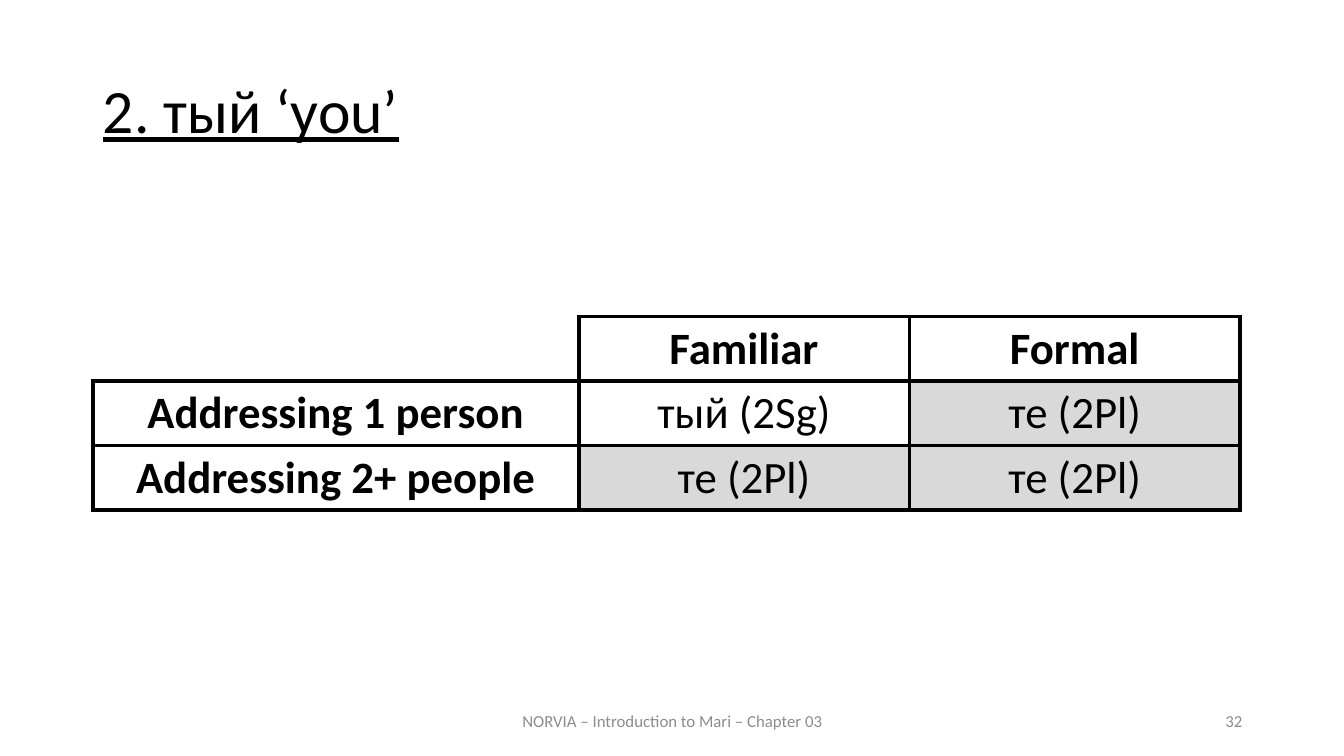
from lxml.etree import SubElement
from pptx import Presentation
from pptx.dml.color import RGBColor
from pptx.enum.text import MSO_ANCHOR, PP_ALIGN
from pptx.oxml.ns import qn
from pptx.util import Inches, Pt

COLORS = {"ink": "000000", "footer": "8C8C8C", "plural": "D9D9D9"}
FONT = "Calibri"
BORDER = Pt(3)
COLUMN_WIDTHS = (4.82, 3.28, 3.28)
ROW_HEIGHT = 0.64
PRONOUNS = (
    ("", "Familiar", "Formal"),
    ("Addressing 1 person", "тый (2Sg)", "те (2Pl)"),
    ("Addressing 2+ people", "те (2Pl)", "те (2Pl)"),
)


def write(frame, text, size, color="ink", align=PP_ALIGN.LEFT, bold=False, underline=False):
    """Put one formatted paragraph into a text frame."""
    frame.word_wrap = True
    paragraph = frame.paragraphs[0]
    paragraph.alignment = align
    run = paragraph.add_run()
    run.text = text
    font = run.font
    font.name, font.size = FONT, Pt(size)
    font.bold, font.underline = bold, underline
    font.color.rgb = RGBColor.from_string(COLORS[color])
    return paragraph


def add_title(slide, text):
    """Place and fill the title placeholder."""
    title = slide.shapes.title
    title.left, title.top = Inches(0.92), Inches(0.4)
    title.width, title.height = Inches(11.5), Inches(1.45)
    title.text_frame.vertical_anchor = MSO_ANCHOR.MIDDLE
    write(title.text_frame, text, 44, underline=True).line_spacing = 0.9


def add_footer(slide, text, left, width, align):
    """Add a small grey text at the foot of the slide."""
    footer = slide.shapes.add_textbox(Inches(left), Inches(6.95), Inches(width), Inches(0.4))
    footer.text_frame.vertical_anchor = MSO_ANCHOR.MIDDLE
    write(footer.text_frame, text, 12, color="footer", align=align)


def set_borders(cell, sides):
    """Draw solid borders on the given sides of a cell."""
    properties = cell._tc.get_or_add_tcPr()
    for side in sides:
        line = SubElement(properties, qn(f"a:ln{side}"), w=str(BORDER))
        fill = SubElement(line, qn("a:solidFill"))
        SubElement(fill, qn("a:srgbClr"), val=COLORS["ink"])


def add_pronoun_table(slide):
    """Add the table of forms of address."""
    table = slide.shapes.add_table(
        len(PRONOUNS), len(COLUMN_WIDTHS), Inches(0.92), Inches(3.14),
        Inches(sum(COLUMN_WIDTHS)), Inches(ROW_HEIGHT * len(PRONOUNS)),
    ).table
    table.first_row = table.horz_banding = False
    for column, width in zip(table.columns, COLUMN_WIDTHS):
        column.width = Inches(width)
    for row, labels in enumerate(PRONOUNS):
        table.rows[row].height = Inches(ROW_HEIGHT)
        for col, label in enumerate(labels):
            cell = table.cell(row, col)
            set_borders(cell, "LRTB" if label else "RB")
            if "2Pl" in label:
                cell.fill.solid()
                cell.fill.fore_color.rgb = RGBColor.from_string(COLORS["plural"])
            else:
                cell.fill.background()
            if label:
                write(cell.text_frame, label, 32, align=PP_ALIGN.CENTER, bold=row == 0 or col == 0)


def main():
    """Build and save the slide."""
    deck = Presentation()
    deck.slide_width, deck.slide_height = Inches(13.33), Inches(7.5)
    slide = deck.slides.add_slide(deck.slide_layouts[5])
    add_title(slide, "2. тый ‘you’")
    add_footer(slide, "NORVIA – Introduction to Mari – Chapter 03", 4.42, 4.5, PP_ALIGN.CENTER)
    add_footer(slide, "32", 9.42, 3, PP_ALIGN.RIGHT)
    add_pronoun_table(slide)
    deck.save("out.pptx")


if __name__ == "__main__":
    main()
